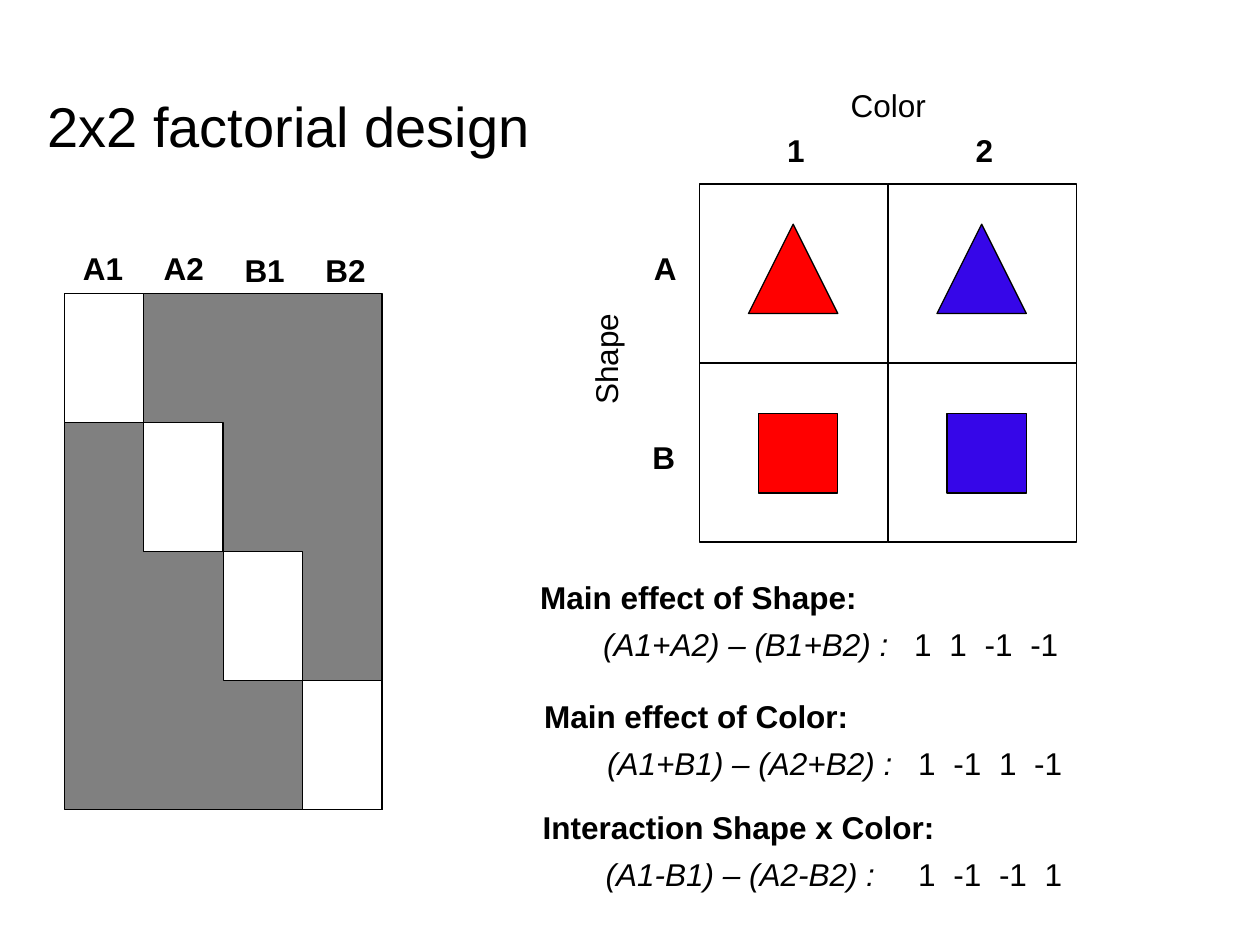
import pptx
import pptx.util
from pptx.dml.color import RGBColor
from pptx.enum.shapes import MSO_SHAPE
from pptx.enum.text import MSO_ANCHOR, PP_ALIGN
from pptx.oxml.ns import qn
from lxml import etree

Cm, Pt = pptx.util.Cm, pptx.util.Pt

BLACK = RGBColor(0x00, 0x00, 0x00)
WHITE = RGBColor(0xFF, 0xFF, 0xFF)
GRAY = RGBColor(0x80, 0x80, 0x80)
RED = RGBColor(0xFF, 0x00, 0x00)
BLUE = RGBColor(0x36, 0x06, 0xE8)

# Content
TITLE = "2x2 factorial design"
CONDITIONS = [("A1", 4.9), ("A2", 4.9), ("B1", 4.93), ("B2", 4.93)]  # label, top
COLORS = [("1", RED), ("2", BLUE)]
# label, label left, shape, inset left, inset top, size
SHAPES = [
    ("A", 12.93, MSO_SHAPE.ISOSCELES_TRIANGLE, 0.99, 0.81, 1.8),
    ("B", 12.9, MSO_SHAPE.RECTANGLE, 1.19, 1.02, 1.6),
]
# heading, left, top, heading width, formula, contrast weights, first weight
EFFECTS = [
    ("Main effect of Shape:", 10.64, 11.53, 6.91,
     "(A1+A2) – (B1+B2) :", ["1", "1", "-1", "-1"], 6.27),
    ("Main effect of Color:", 10.72, 13.92, 6.65,
     "(A1+B1) – (A2+B2) :", ["1", "-1", "1", "-1"], 6.27),
    ("Interaction Shape x Color:", 10.69, 16.16, 8.41,
     "(A1-B1) – (A2-B2) :", ["1", "-1", "-1", "1"], 6.3),
]

# Geometry in centimetres
MATRIX_LEFT, MATRIX_TOP, STEP_WIDTH, STEP_HEIGHT = 1.3, 5.92, 1.6, 2.6
GRID_LEFT, GRID_TOP, CELL_WIDTH, CELL_HEIGHT = 14.1, 3.71, 3.8, 3.61
LINE_HEIGHT = 1.02
WEIGHT_STEP, MINUS_WIDTH = 0.71, 0.21

deck = pptx.Presentation()
deck.slide_width, deck.slide_height = Cm(25.4), Cm(19.05)
page = deck.slides.add_slide(deck.slide_layouts[5])


def set_font(span, size=18, **styles):
    span.font.color.rgb = BLACK
    for name, value in {"name": "Arial", "size": Pt(size), **styles}.items():
        setattr(span.font, name, value)


def add_block(kind, left, top, width, height, fill):
    block = page.shapes.add_shape(kind, Cm(left), Cm(top), Cm(width), Cm(height))
    block.shadow.inherit = False
    block.fill.solid()
    block.fill.fore_color.rgb = fill
    block.line.color.rgb = BLACK
    block.line.width = Pt(0.75)


def add_label(text, left, top, width, **styles):
    box = page.shapes.add_textbox(Cm(left), Cm(top), Cm(width), Cm(LINE_HEIGHT))
    box.text_frame.word_wrap = False
    span = box.text_frame.paragraphs[0].add_run()
    span.text = text
    set_font(span, **styles)
    return box


def add_contrast(formula, weights, first, left, top):
    box = add_label(formula, left, top, 10, italic=True)
    box.text_frame.word_wrap = True
    para = box.text_frame.paragraphs[0]
    stops = etree.SubElement(para._p.get_or_add_pPr(), qn("a:tabLst"))
    position = first
    for weight in weights:
        etree.SubElement(stops, qn("a:tab"), pos=str(Cm(position)), algn="l")
        position += WEIGHT_STEP + MINUS_WIDTH * weight.startswith("-")
    span = para.add_run()
    span.text = "".join("\t" + weight for weight in weights)
    set_font(span, italic=False)


# Title
title = page.shapes.title
title.left, title.top, title.width, title.height = Cm(0.7), Cm(1.73), Cm(23.57), Cm(1.6)
title.text_frame.text = TITLE
title.text_frame.vertical_anchor = MSO_ANCHOR.MIDDLE
title.text_frame.paragraphs[0].alignment = PP_ALIGN.LEFT
set_font(title.text_frame.paragraphs[0].runs[0], size=32)

# Design matrix with one white block per condition
count = len(CONDITIONS)
add_block(MSO_SHAPE.RECTANGLE, MATRIX_LEFT, MATRIX_TOP,
          count * STEP_WIDTH, count * STEP_HEIGHT, GRAY)
for index, (label, top) in enumerate(CONDITIONS):
    add_block(MSO_SHAPE.RECTANGLE, MATRIX_LEFT + index * STEP_WIDTH,
              MATRIX_TOP + index * STEP_HEIGHT, STEP_WIDTH, STEP_HEIGHT, WHITE)
    add_label(label, 1.42 + index * 1.63, top, 1.32, bold=True)

# Shape by color grid
for row, (label, label_left, kind, inset_left, inset_top, size) in enumerate(SHAPES):
    cell_top = GRID_TOP + row * CELL_HEIGHT
    add_label(label, label_left, 4.9 + row * 3.81, 0.97, bold=True)
    for column, (number, color) in enumerate(COLORS):
        cell_left = GRID_LEFT + column * CELL_WIDTH
        add_block(MSO_SHAPE.RECTANGLE, cell_left, cell_top, CELL_WIDTH, CELL_HEIGHT, WHITE)
        add_block(kind, cell_left + inset_left, cell_top + inset_top, size, size, color)
for column, (number, color) in enumerate(COLORS):
    add_label(number, 15.62 + column * CELL_WIDTH, 2.51, 0.86, bold=True)

# Factor names, the row factor turned to read upwards
add_label("Color", 16.9, 1.6, 2.03)
row_factor = add_label("Shape", 10.81, 6.73, 2.8)
row_factor.text_frame.paragraphs[0].alignment = PP_ALIGN.CENTER
row_factor.rotation = 270

# Effects and their contrasts
for heading, left, top, width, formula, weights, first in EFFECTS:
    add_label(heading, left, top, width, bold=True)
    add_contrast(formula, weights, first, left + 1.27, top + 0.95)

deck.save("out.pptx")
